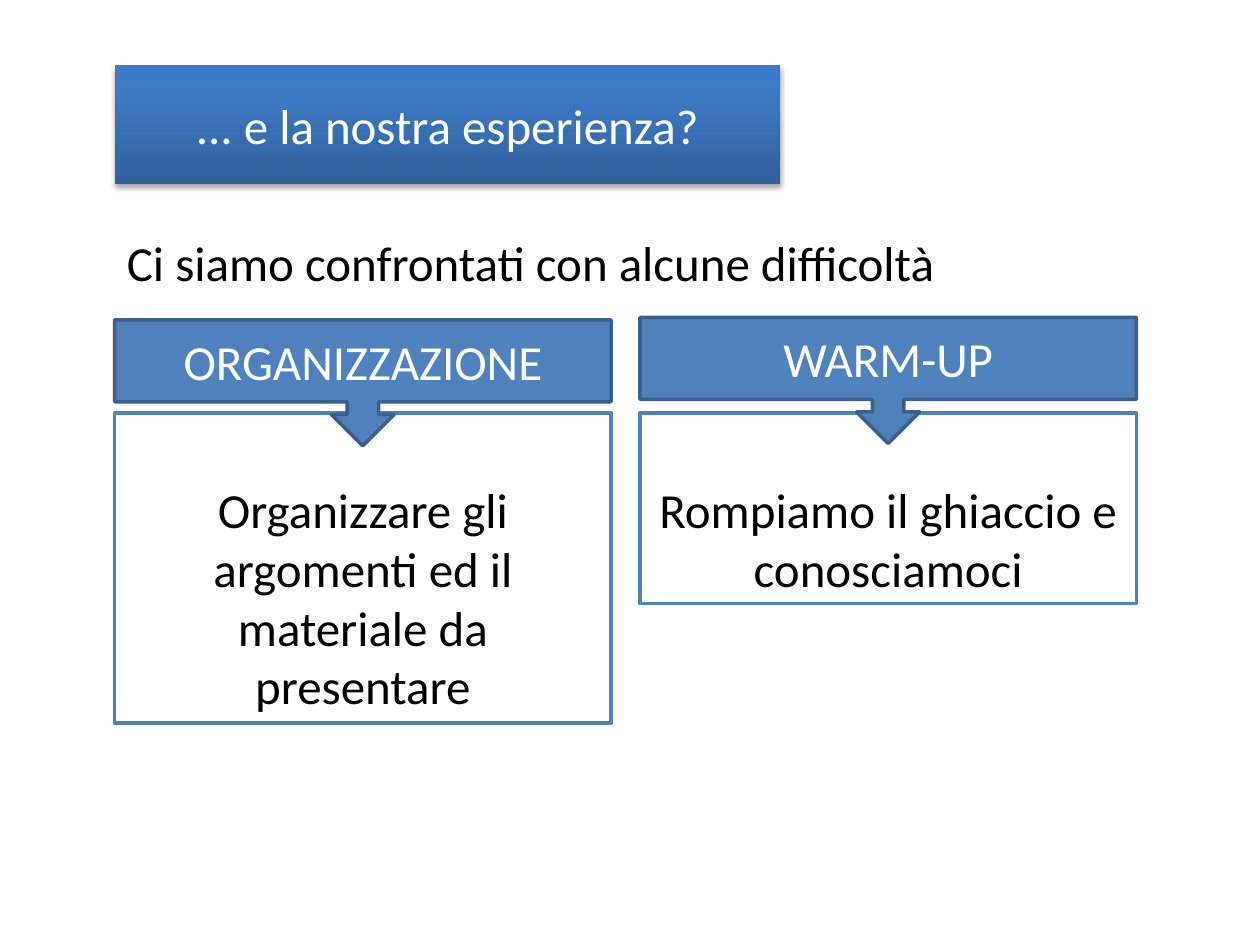
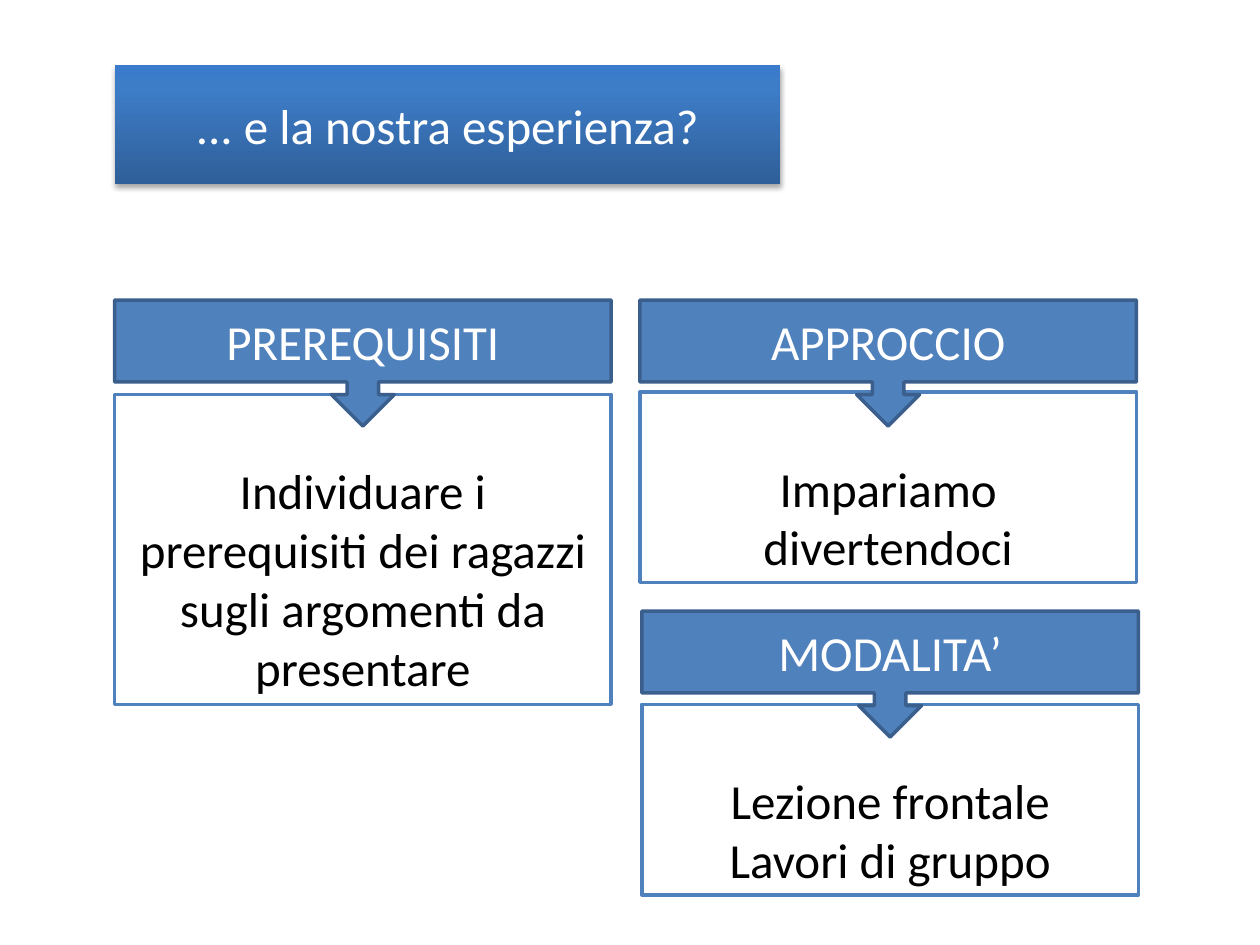
"""Builds two slides on the difficulties met in our teaching experience."""
from pptx import Presentation
from pptx.dml.color import RGBColor
from pptx.enum.shapes import MSO_SHAPE
from pptx.enum.text import MSO_ANCHOR, MSO_AUTO_SIZE, PP_ALIGN
from pptx.oxml import parse_xml
from pptx.util import Cm, Pt

BLUE, EDGE, WHITE, BLACK = "4F81BD", "3A5F8C", "FFFFFF", "000000"
LEFT, RIGHT, WIDE = 2.31, 12.9, 10.01
HEAD, LINE, PAD = 2.54, 1.205, 1.43
NS = 'xmlns:a="http://schemas.openxmlformats.org/drawingml/2006/main"'
STOPS = [(0, "2F5F99"), (80, "3D7CC7"), (100, "3A7CCB")]
GRAD = "".join(f'<a:gs pos="{pos * 1000}"><a:srgbClr val="{tone}"/></a:gs>' for pos, tone in STOPS)
BANNER = [
    f'<a:prstGeom {NS} prst="homePlate"><a:avLst/></a:prstGeom>',
    f'<a:gradFill {NS} rotWithShape="1"><a:gsLst>{GRAD}</a:gsLst><a:lin ang="16200000" scaled="0"/></a:gradFill>',
    f'<a:effectLst {NS}><a:outerShdw blurRad="39400" dist="22900" dir="5400000" rotWithShape="0">'
    f'<a:srgbClr val="{BLACK}"><a:alpha val="35000"/></a:srgbClr></a:outerShdw></a:effectLst>',
]

SLIDES = [
    ("Ci siamo confrontati con alcune difficoltà", [
        (LEFT, 6.45, 8.33, 4, "ORGANIZZAZIONE", "Organizzare gli argomenti ed il materiale da presentare"),
        (RIGHT, 6.4, 8.33, 2, "WARM-UP", "Rompiamo il ghiaccio e conosciamoci"),
    ]),
    (None, [
        (LEFT, 6.05, 7.95, 4, "PREREQUISITI",
         "Individuare i prerequisiti dei ragazzi sugli argomenti da presentare"),
        (RIGHT, 6.05, 7.9, 2, "APPROCCIO", "Impariamo divertendoci"),
        (RIGHT + 0.04, 12.32, 14.2, 2, "MODALITA’", "Lezione frontale\nLavori di gruppo"),
    ]),
]


def write(shape, text, tone, align=PP_ALIGN.CENTER, anchor=MSO_ANCHOR.MIDDLE):
    frame = shape.text_frame
    frame.text = text
    frame.word_wrap = True
    frame.auto_size = MSO_AUTO_SIZE.NONE
    frame.vertical_anchor = anchor
    for para in frame.paragraphs:
        para.alignment = align
        for run in para.runs:
            run.font.name = "Calibri"
            run.font.size = Pt(28)
            run.font.color.rgb = RGBColor.from_string(tone)


def block(slide, kind, place, fill, edge):
    shape = slide.shapes.add_shape(kind, *map(Cm, place))
    shape.shadow.inherit = False
    shape.fill.solid()
    shape.fill.fore_color.rgb = RGBColor.from_string(fill)
    shape.line.color.rgb = RGBColor.from_string(edge)
    shape.line.width = Pt(2)
    return shape


deck = Presentation()
deck.slide_width, deck.slide_height = Cm(25.4), Cm(19.05)

for intro, cards in SLIDES:
    slide = deck.slides.add_slide(deck.slide_layouts[5])
    title = slide.shapes.title
    title.left, title.top, title.width, title.height = map(Cm, (LEFT, 1.32, 13.41, 2.39))
    for part in BANNER:
        title.element.spPr.append(parse_xml(part))
    write(title, "... e la nostra esperienza?", WHITE)

    if intro:
        lead = slide.shapes.add_textbox(Cm(LEFT), Cm(4.57), Cm(20.4), Cm(1.45))
        write(lead, intro, BLACK, PP_ALIGN.LEFT, MSO_ANCHOR.TOP)

    for left, top, below, lines, label, text in cards:
        body = block(slide, MSO_SHAPE.RECTANGLE, (left, below, WIDE, PAD + LINE * lines), WHITE, BLUE)
        write(body, text, BLACK, anchor=MSO_ANCHOR.TOP)
        body.text_frame.margin_top = Cm(0.13 + LINE)
        head = block(slide, MSO_SHAPE.DOWN_ARROW_CALLOUT, (left, top, WIDE, HEAD), BLUE, EDGE)
        write(head, label, WHITE)

deck.save("out.pptx")
